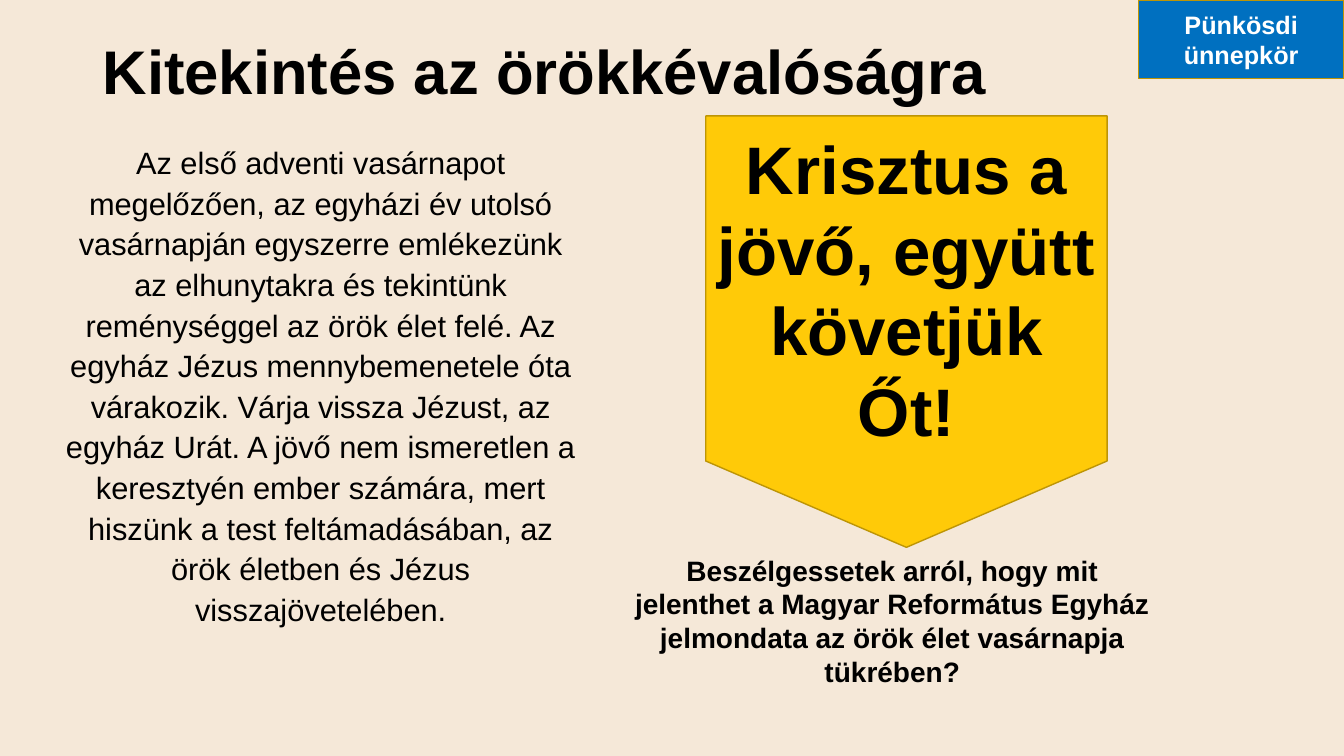
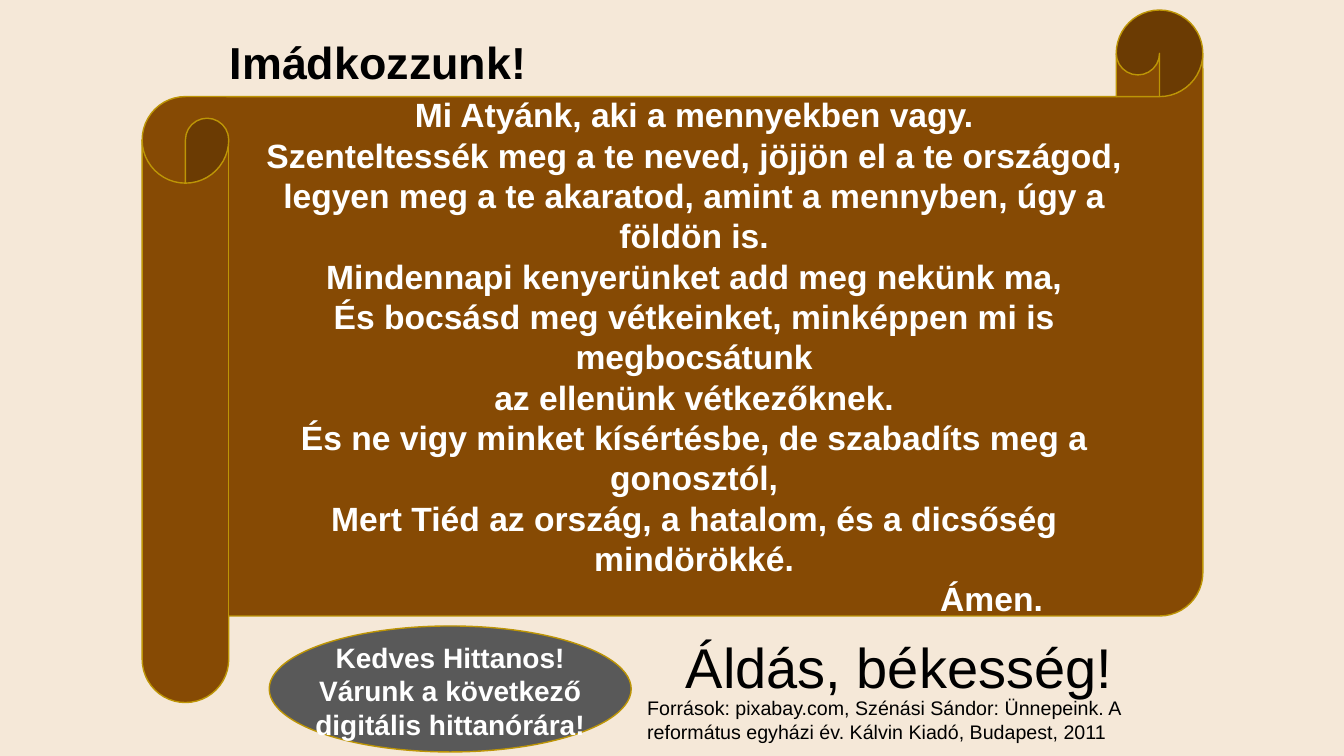
from dataclasses import dataclass

import pptx
import pptx.dml.color
import pptx.enum.shapes
import pptx.enum.text
import pptx.util

Inches = pptx.util.Inches
Pt = pptx.util.Pt
Align = pptx.enum.text.PP_ALIGN
Anchor = pptx.enum.text.MSO_ANCHOR
Shape = pptx.enum.shapes.MSO_SHAPE


@dataclass(frozen=True)
class Theme:
    font: str = "Arial"
    background: str = "F5E8D8"
    ink: str = "000000"
    light: str = "FFFFFF"
    outline: str = "BD9506"
    gold: str = "FFCA08"
    blue: str = "0070C0"
    brown: str = "864A04"
    grey: str = "595959"
    motto: int = 48
    title: int = 44
    blessing: int = 40
    heading: int = 32
    prayer: int = 24
    body: int = 22
    note: int = 20
    tag: int = 18
    source: int = 14


THEME = Theme()

PRAYER = """Mi Atyánk, aki a mennyekben vagy.
Szenteltessék meg a te neved, jöjjön el a te országod,
legyen meg a te akaratod, amint a mennyben, úgy a földön is.
Mindennapi kenyerünket add meg nekünk ma,
És bocsásd meg vétkeinket, minképpen mi is megbocsátunk
az ellenünk vétkezőknek.
És ne vigy minket kísértésbe, de szabadíts meg a gonosztól,
Mert Tiéd az ország, a hatalom, és a dicsőség mindörökké.
Ámen."""

ETERNITY = (
    "Az első adventi vasárnapot megelőzően, az egyházi év utolsó vasárnapján "
    "egyszerre emlékezünk az elhunytakra és tekintünk reménységgel az örök élet "
    "felé. Az egyház Jézus mennybemenetele óta várakozik. Várja vissza Jézust, "
    "az egyház Urát. A jövő nem ismeretlen a keresztyén ember számára, mert "
    "hiszünk a test feltámadásában, az örök életben és Jézus visszajövetelében."
)


def rgb(value):
    return pptx.dml.color.RGBColor.from_string(value)


def write(sp, text, size, color=THEME.ink, bold=True, align=Align.CENTER,
          anchor=Anchor.TOP, spacing=None):
    tf = sp.text_frame
    tf.word_wrap = True
    tf.vertical_anchor = anchor
    tf.text = text
    for p in tf.paragraphs:
        p.alignment = align
        if spacing:
            p.line_spacing = spacing
        for r in p.runs:
            r.font.name = THEME.font
            r.font.size = Pt(size)
            r.font.bold = bold
            r.font.color.rgb = rgb(color)


def add_text(s, box, text, size, **style):
    sp = s.shapes.add_textbox(*map(Inches, box))
    write(sp, text, size, **style)


def add_panel(s, kind, box, fill):
    sp = s.shapes.add_shape(kind, *map(Inches, box))
    sp.shadow.inherit = False
    sp.fill.solid()
    sp.fill.fore_color.rgb = rgb(fill)
    sp.line.color.rgb = rgb(THEME.outline)
    sp.line.width = Pt(1)
    return sp


def add_label(s, kind, box, fill, text, size, color):
    sp = add_panel(s, kind, box, fill)
    write(sp, text, size, color=color, anchor=Anchor.MIDDLE)
    return sp


def add_slide(prs):
    return prs.slides.add_slide(prs.slide_layouts[6])


def build_eternity(prs):
    s = add_slide(prs)
    add_text(s, (0.92, 0.12, 11.5, 1.24), "Kitekintés az örökkévalóságra",
             THEME.title, align=Align.LEFT, anchor=Anchor.MIDDLE, spacing=0.9)
    add_text(s, (0.49, 1.34, 5.38, 5.43), ETERNITY, THEME.body,
             bold=False, spacing=1.1)
    add_label(s, Shape.FLOWCHART_OFFPAGE_CONNECTOR, (7, 1.15, 3.98, 4.28),
              THEME.gold, "Krisztus a jövő, együtt követjük Őt!",
              THEME.motto, THEME.ink)
    add_text(s, (6.16, 5.44, 5.38, 1.45),
             "Beszélgessetek arról, hogy mit jelenthet a Magyar Református "
             "Egyház jelmondata az örök élet vasárnapja tükrében?", THEME.note)
    add_label(s, Shape.RECTANGLE, (11.29, 0, 2.04, 0.78), THEME.blue,
              "Pünkösdi ünnepkör", THEME.tag, THEME.light)


def build_prayer(prs):
    s = add_slide(prs)
    add_text(s, (1.78, 0.29, 3.94, 0.62), "Imádkozzunk!", THEME.heading)
    scroll = add_label(s, Shape.HORIZONTAL_SCROLL, (1.41, 0.1, 10.52, 6.87),
                       THEME.brown, PRAYER, THEME.prayer, THEME.light)
    amen = scroll.text_frame.paragraphs[-1]
    amen._p.get_or_add_pPr().set("marL", str(Inches(5.9)))
    add_panel(s, Shape.OVAL, (2.67, 6.21, 3.59, 1.25), THEME.grey)
    add_text(s, (2.67, 6.3, 3.59, 1.11),
             "Kedves Hittanos!\nVárunk a következő digitális hittanórára!",
             THEME.note, color=THEME.light)
    add_text(s, (5.58, 6.23, 6.67, 0.77), "Áldás, békesség!",
             THEME.blessing, bold=False)
    add_text(s, (6.32, 6.86, 5.29, 0.57),
             "Források: pixabay.com, Szénási Sándor: Ünnepeink. A református "
             "egyházi év. Kálvin Kiadó, Budapest, 2011",
             THEME.source, bold=False, align=Align.LEFT)


def main():
    prs = pptx.Presentation()
    prs.slide_width = Inches(13.33)
    prs.slide_height = Inches(7.5)
    fill = prs.slide_master.background.fill
    fill.solid()
    fill.fore_color.rgb = rgb(THEME.background)
    build_eternity(prs)
    build_prayer(prs)
    prs.save("out.pptx")


if __name__ == "__main__":
    main()
